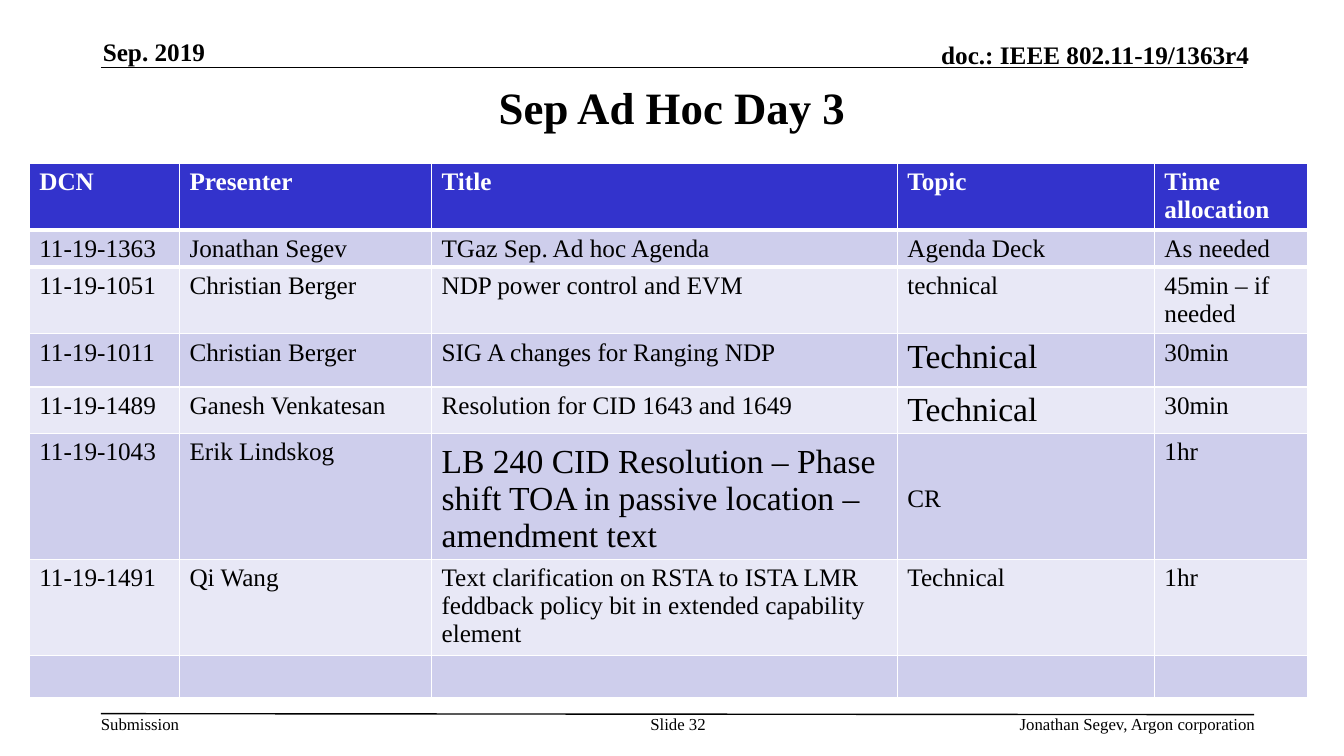
from lxml.etree import SubElement
from pptx import Presentation
from pptx.dml.color import RGBColor
from pptx.enum.shapes import MSO_CONNECTOR
from pptx.enum.text import MSO_ANCHOR, PP_ALIGN
from pptx.oxml.ns import qn
from pptx.util import Inches, Pt

FONT = "Times New Roman"
BLACK = RGBColor(0x00, 0x00, 0x00)
WHITE = RGBColor(0xFF, 0xFF, 0xFF)
HEADER_BLUE = RGBColor(0x33, 0x33, 0xCC)
BANDS = [RGBColor(0xE8, 0xE8, 0xF6), RGBColor(0xCE, 0xCE, 0xEC)]

LEFT, CENTER, RIGHT = PP_ALIGN.LEFT, PP_ALIGN.CENTER, PP_ALIGN.RIGHT
TOP, MIDDLE, BOTTOM = MSO_ANCHOR.TOP, MSO_ANCHOR.MIDDLE, MSO_ANCHOR.BOTTOM

# text, (left, top, width, height), size, bold, alignment, anchor
LABELS = [
    ("Sep. 2019", (1.02, 0.36, 2.73, 0.3), 18, True, LEFT, BOTTOM),
    ("doc.: IEEE 802.11-19/1363r4", (7.29, 0.39, 5.1, 0.3), 18, True, RIGHT, BOTTOM),
    ("Sep Ad Hoc Day 3", (1, 0.75, 11.33, 0.61), 32, True, CENTER, MIDDLE),
    ("Submission", (1, 7.08, 0.79, 0.2), 12, False, LEFT, TOP),
    ("Slide 32", (6.34, 7.08, 0.77, 0.2), 12, False, CENTER, TOP),
    ("Jonathan Segev, Argon corporation", (7.81, 7.08, 4.64, 0.2), 12, False, RIGHT, TOP),
]
RULES = [(1, 0.67, 12.33, 0.67), (1, 7.08, 12.44, 7.09)]

AGENDA = [
    ("DCN", "Presenter", "Title", "Topic", "Time allocation"),
    ("11-19-1363", "Jonathan Segev", "TGaz Sep. Ad hoc Agenda", "Agenda Deck", "As needed"),
    ("11-19-1051", "Christian Berger", "NDP power control and EVM", "technical",
     "45min – if needed"),
    ("11-19-1011", "Christian Berger", "SIG A changes for Ranging NDP", "Technical", "30min"),
    ("11-19-1489", "Ganesh Venkatesan", "Resolution for CID 1643 and 1649", "Technical",
     "30min"),
    ("11-19-1043", "Erik Lindskog",
     "LB 240 CID Resolution – Phase shift TOA in passive location – amendment text",
     "CR", "1hr"),
    ("11-19-1491", "Qi Wang",
     "Text clarification on RSTA to ISTA LMR feddback policy bit in extended "
     "capability element", "Technical", "1hr"),
    ("", "", "", "", ""),
]
COL_WIDTHS = [1.49, 2.5, 4.62, 2.55, 1.52]
ROW_HEIGHTS = [0.66, 0.37, 0.66, 0.53, 0.46, 1.21, 0.92, 0.42]
LARGE_CELLS = {(3, 3), (4, 3), (5, 2)}
MIDDLE_CELLS = {(5, 2), (5, 3)}


def style(p, size, bold, color):
    for r in p.runs:
        r.font.name, r.font.size, r.font.bold = FONT, Pt(size), bold
        r.font.color.rgb = color


def add_label(s, text, box, size, bold, align, anchor):
    tf = s.shapes.add_textbox(*map(Inches, box)).text_frame
    tf.margin_left = tf.margin_right = tf.margin_top = tf.margin_bottom = 0
    tf.word_wrap, tf.vertical_anchor = True, anchor
    p = tf.paragraphs[0]
    p.text, p.alignment = text, align
    style(p, size, bold, BLACK)


def add_rule(s, ends):
    line = s.shapes.add_connector(MSO_CONNECTOR.STRAIGHT, *map(Inches, ends))
    line.line.color.rgb, line.line.width = BLACK, Pt(1)
    SubElement(line._element.spPr, qn("a:effectLst"))


def add_border(cell, side):
    """Draw a thick white border; call before the cell is filled."""
    ln = SubElement(cell._tc.get_or_add_tcPr(), qn(side), w=str(Pt(3)))
    fill = SubElement(ln, qn("a:solidFill"))
    SubElement(fill, qn("a:srgbClr"), val=str(WHITE))


def add_agenda(s):
    table = s.shapes.add_table(
        len(AGENDA), len(COL_WIDTHS), Inches(0.29), Inches(1.62),
        Inches(sum(COL_WIDTHS)), Inches(sum(ROW_HEIGHTS))).table
    for column, width in zip(table.columns, COL_WIDTHS):
        column.width = Inches(width)
    for i, values in enumerate(AGENDA):
        table.rows[i].height = Inches(ROW_HEIGHTS[i])
        header = i == 0
        for j, value in enumerate(values):
            cell = table.cell(i, j)
            if i < 2:
                add_border(cell, "a:lnB" if header else "a:lnT")
            cell.fill.solid()
            cell.fill.fore_color.rgb = HEADER_BLUE if header else BANDS[i % 2]
            cell.vertical_anchor = MIDDLE if (i, j) in MIDDLE_CELLS else TOP
            # The row heights already leave room below the text.
            cell.margin_bottom = 0
            if value:
                cell.text_frame.text = value
                style(cell.text_frame.paragraphs[0], 24 if (i, j) in LARGE_CELLS else 18,
                      header, WHITE if header else BLACK)


def main():
    prs = Presentation()
    prs.slide_width, prs.slide_height = Inches(13.33), Inches(7.5)
    s = prs.slides.add_slide(prs.slide_layouts[6])
    for ends in RULES:
        add_rule(s, ends)
    for label in LABELS:
        add_label(s, *label)
    add_agenda(s)
    prs.save("out.pptx")


if __name__ == "__main__":
    main()
